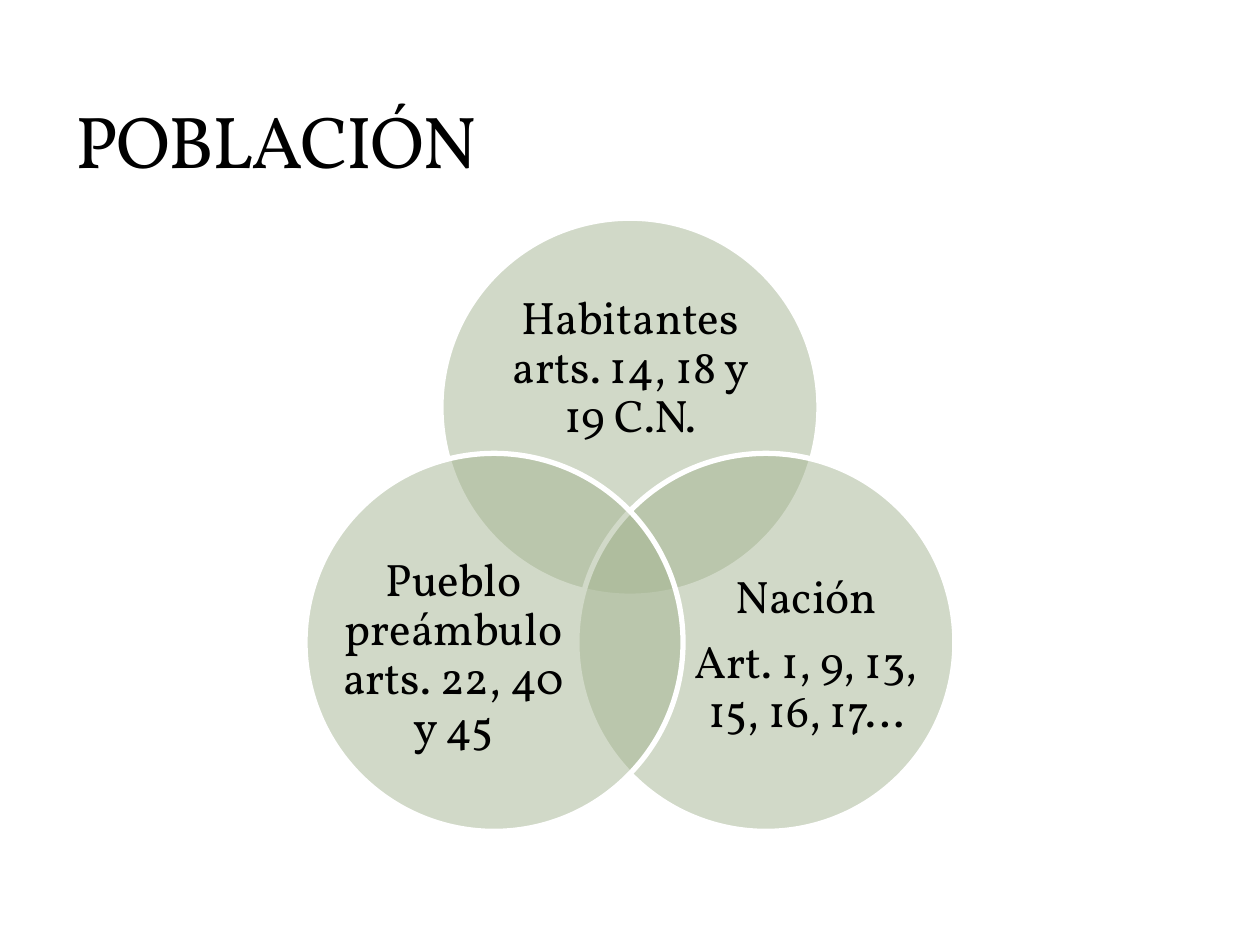
from pptx import Presentation
from pptx.dml.color import RGBColor
from pptx.enum.shapes import MSO_SHAPE
from pptx.enum.text import MSO_ANCHOR, PP_ALIGN
from pptx.oxml.ns import qn
from pptx.util import Cm, Pt
from lxml import etree

OVAL = MSO_SHAPE.OVAL
MIDDLE, BOTTOM = MSO_ANCHOR.MIDDLE, MSO_ANCHOR.BOTTOM
LEFT, CENTER = PP_ALIGN.LEFT, PP_ALIGN.CENTER

COLORS = {"circle": "A5B592", "edge": "FFFFFF", "text": "000000"}
FONT = "Vollkorn"
TITLE_FORMAT = {"alignment": LEFT}
LABEL_FORMAT = {"alignment": CENTER, "line_spacing": 0.9, "space_after": Pt(9)}

# Text areas inside a circle: left, top, width, height in cm
TOP_AREA = (1.02, 1.32, 5.59, 3.43)
RIGHT_AREA = (2.34, 1.98, 4.57, 4.19)
LEFT_AREA = (0.71, 1.98, 4.57, 4.19)


def add_text(s, box, paragraphs, size, anchor, p_format, margins=None, spacing=None):
    tf = s.shapes.add_textbox(*(Cm(v) for v in box)).text_frame
    tf_format = {"word_wrap": True, "vertical_anchor": anchor, **(margins or {})}
    for name, value in tf_format.items():
        setattr(tf, name, value)
    for i, text in enumerate(paragraphs):
        p = tf.paragraphs[0] if i == 0 else tf.add_paragraph()
        for name, value in p_format.items():
            setattr(p, name, value)
        r = p.add_run()
        r.text = text
        for name, value in {"name": FONT, "size": Pt(size)}.items():
            setattr(r.font, name, value)
        r.font.color.rgb = RGBColor.from_string(COLORS["text"])
        if spacing is not None:
            r.font._element.set("spc", str(spacing))


def add_title(s, box, text):
    add_text(s, box, [text], 42, BOTTOM, TITLE_FORMAT, spacing=-100)


def add_circle(s, x, y, d):
    sp = s.shapes.add_shape(OVAL, Cm(x), Cm(y), Cm(d), Cm(d))
    sp.shadow.inherit = False
    sp.fill.solid()
    sp.fill.fore_color.rgb = RGBColor.from_string(COLORS["circle"])
    sp.line.color.rgb = RGBColor.from_string(COLORS["edge"])
    sp.line.width = Pt(3)
    # Half transparent fill
    color = sp._element.spPr.find(qn("a:solidFill"))[0]
    etree.SubElement(color, qn("a:alpha")).set("val", "50000")


def add_venn(s, box, d, top, right, left):
    x, y, w, h = box
    low = y + h - d
    margins = dict.fromkeys(
        ("margin_left", "margin_top", "margin_right", "margin_bottom"), 0)
    sets = [
        (x + (w - d) / 2, y, TOP_AREA, top),
        (x + w - d, low, RIGHT_AREA, right),
        (x, low, LEFT_AREA, left),
    ]
    for cx, cy, (dx, dy, tw, th), paragraphs in sets:
        add_circle(s, cx, cy, d)
        add_text(s, (cx + dx, cy + dy, tw, th), paragraphs, 26, MIDDLE,
                 LABEL_FORMAT, margins)


def main():
    prs = Presentation()
    prs.slide_width, prs.slide_height = Cm(25.4), Cm(19.05)
    s = prs.slides.add_slide(prs.slide_layouts[6])

    # Overlapping circles
    add_venn(s, (6.15, 4.4, 13.1, 12.36), 7.62,
             top=["Habitantes arts. 14, 18 y 19 C.N."],
             right=["Nación", "Art. 1, 9, 13, 15, 16, 17…"],
             left=["Pueblo preámbulo arts. 22, 40 y 45"])

    # Heading
    add_title(s, (1.27, 0.43, 22.86, 3.38), "POBLACIÓN")

    prs.save("out.pptx")


if __name__ == "__main__":
    main()
